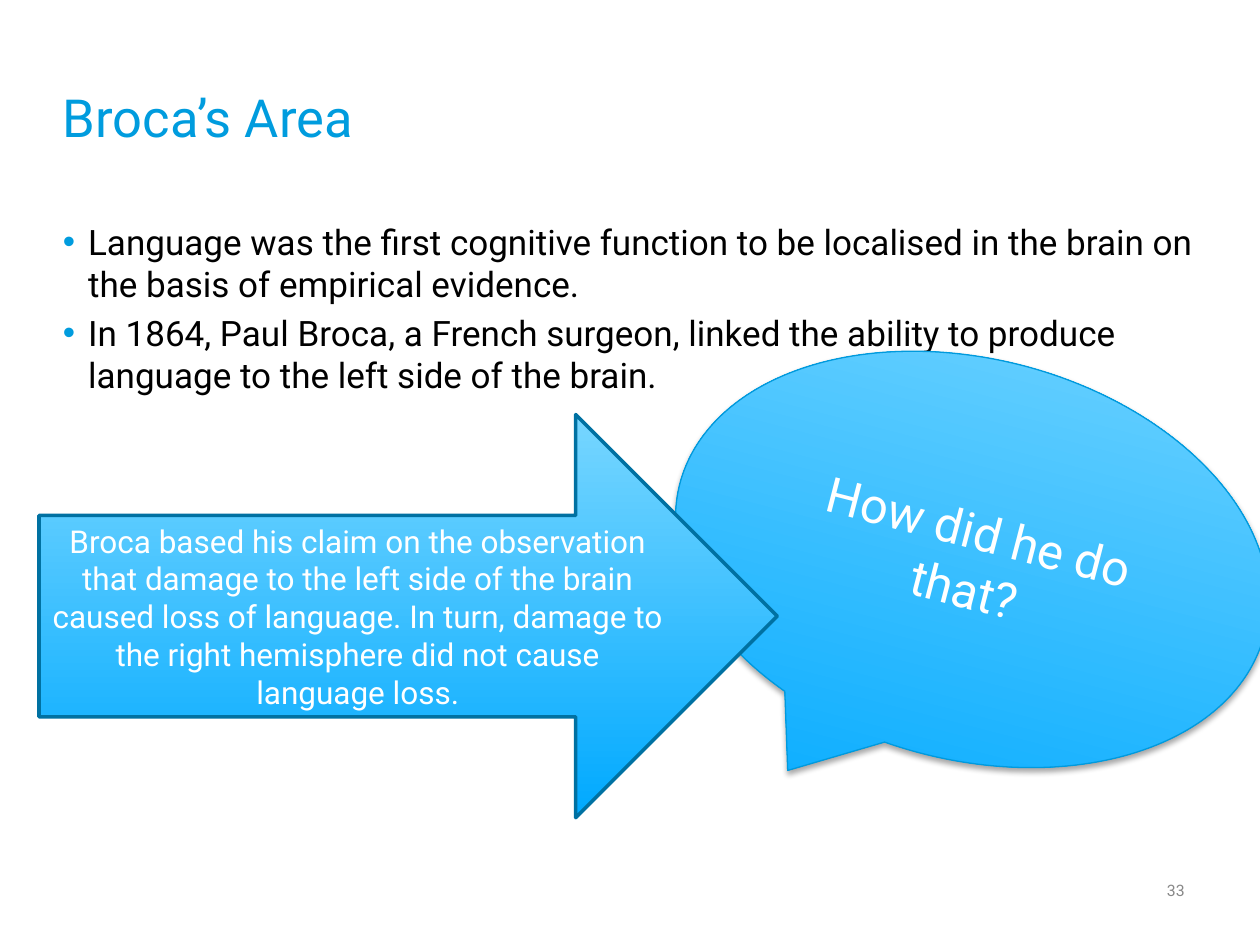
from dataclasses import dataclass

from pptx import Presentation
from pptx.dml.color import RGBColor
from pptx.enum import shapes, text
from pptx.oxml import parse_xml
from pptx.oxml.ns import nsdecls, qn
from pptx.util import Pt


@dataclass(frozen=True)
class Theme:
    font: str = "Roboto"
    accent: str = "009CDE"
    ink: str = "000000"
    muted: str = "888888"
    light: str = "FFFFFF"
    fill_low: str = "00A9FF"
    fill_high: str = "77D6FF"
    callout_line: str = "009ADD"
    arrow_line: str = "0071A2"
    title: int = 30
    callout: int = 28
    body: int = 20
    arrow: int = 18
    number: int = 9


THEME = Theme()
INSET = (7.2, 3.6)
LEFT, CENTER, RIGHT = text.PP_ALIGN.LEFT, text.PP_ALIGN.CENTER, text.PP_ALIGN.RIGHT
TOP, MIDDLE = text.MSO_ANCHOR.TOP, text.MSO_ANCHOR.MIDDLE

BULLETS = [
    "Language was the first cognitive function to be localised in the brain on "
    "the basis of empirical evidence.",
    "In 1864, Paul Broca, a French surgeon, linked the ability to produce "
    "language to the left side of the brain.",
]
CLAIM = (
    "Broca based his claim on the observation that damage to the left side of the "
    "brain caused loss of language. In turn, damage to the right hemisphere did not "
    "cause language loss."
)


def set_frame(tf, anchor, inset=(0, 0)):
    tf.word_wrap = True
    tf.vertical_anchor = anchor
    tf.margin_left = tf.margin_right = Pt(inset[0])
    tf.margin_top = tf.margin_bottom = Pt(inset[1])


def add_run(p, words, size, color, align=LEFT):
    p.alignment = align
    r = p.add_run()
    r.text = words
    r.font.name = THEME.font
    r.font.size = Pt(size)
    r.font.color.rgb = RGBColor.from_string(color)


def add_line(s, box, words, size, color, align=LEFT, inset=(0, 0)):
    """Place a text box with one vertically centred paragraph."""
    tf = s.shapes.add_textbox(*map(Pt, box)).text_frame
    set_frame(tf, MIDDLE, inset)
    add_run(tf.paragraphs[0], words, size, color, align)


def add_bullet(p, indent=14.4):
    pPr = p._p.get_or_add_pPr()
    pPr.set("marL", str(Pt(indent)))
    pPr.set("indent", str(-Pt(indent)))
    for xml in (
        f'<a:buClr {nsdecls("a")}><a:srgbClr val="{THEME.accent}"/></a:buClr>',
        f'<a:buFont {nsdecls("a")} typeface="Arial"/>',
        f'<a:buChar {nsdecls("a")} char="•"/>',
    ):
        pPr.append(parse_xml(xml))


def add_body(s, box, items):
    tf = s.shapes.add_textbox(*map(Pt, box)).text_frame
    set_frame(tf, TOP)
    for i, item in enumerate(items):
        p = tf.add_paragraph() if i else tf.paragraphs[0]
        add_bullet(p)
        if i:
            p.space_before = Pt(4)
        add_run(p, item, THEME.body, THEME.ink)


def add_gradient_shape(s, box, kind, adjustments, line, width, words, size):
    sp = s.shapes.add_shape(kind, *map(Pt, box))
    for i, value in enumerate(adjustments):
        sp.adjustments[i] = value
    sp.fill.gradient()
    sp.fill.gradient_angle = 90
    for stop, color in zip(sp.fill.gradient_stops, (THEME.fill_low, THEME.fill_high)):
        stop.color.rgb = RGBColor.from_string(color)
    sp.line.color.rgb = RGBColor.from_string(line)
    sp.line.width = Pt(width)
    sp.shadow.inherit = False
    set_frame(sp.text_frame, MIDDLE, INSET)
    add_run(sp.text_frame.paragraphs[0], words, size, THEME.light, CENTER)
    return sp


def add_soft_shadow(sp):
    sp._element.spPr.find(qn("a:effectLst")).append(parse_xml(
        f'<a:outerShdw {nsdecls("a")} blurRad="{Pt(3.1)}" dist="{Pt(1.8)}" '
        'dir="5400000" rotWithShape="0"><a:srgbClr val="000000">'
        '<a:alpha val="35000"/></a:srgbClr></a:outerShdw>'))


def add_callout(s, box):
    sp = add_gradient_shape(
        s, box, shapes.MSO_SHAPE.OVAL_CALLOUT, (-0.208, 0.625),
        THEME.callout_line, 0.75, "How did he do that?", THEME.callout)
    sp.rotation = 14.5
    add_soft_shadow(sp)


def add_claim_arrow(s, box):
    add_gradient_shape(
        s, box, shapes.MSO_SHAPE.RIGHT_ARROW, (0.5, 0.5),
        THEME.arrow_line, 2, CLAIM, THEME.arrow)


def main():
    prs = Presentation()
    prs.slide_width, prs.slide_height = Pt(720), Pt(540)
    s = prs.slides.add_slide(prs.slide_layouts[6])
    add_body(s, (36, 126, 648, 356.4), BULLETS)
    add_line(s, (36, 21.6, 648, 90), "Broca’s Area", THEME.title, THEME.accent)
    add_line(s, (522, 494.6, 162, 28.8), "33", THEME.number, THEME.muted, RIGHT, INSET)
    add_callout(s, (383, 205.2, 344.9, 229))
    add_claim_arrow(s, (22.3, 236.9, 421.9, 230.4))
    prs.save("out.pptx")


if __name__ == "__main__":
    main()
